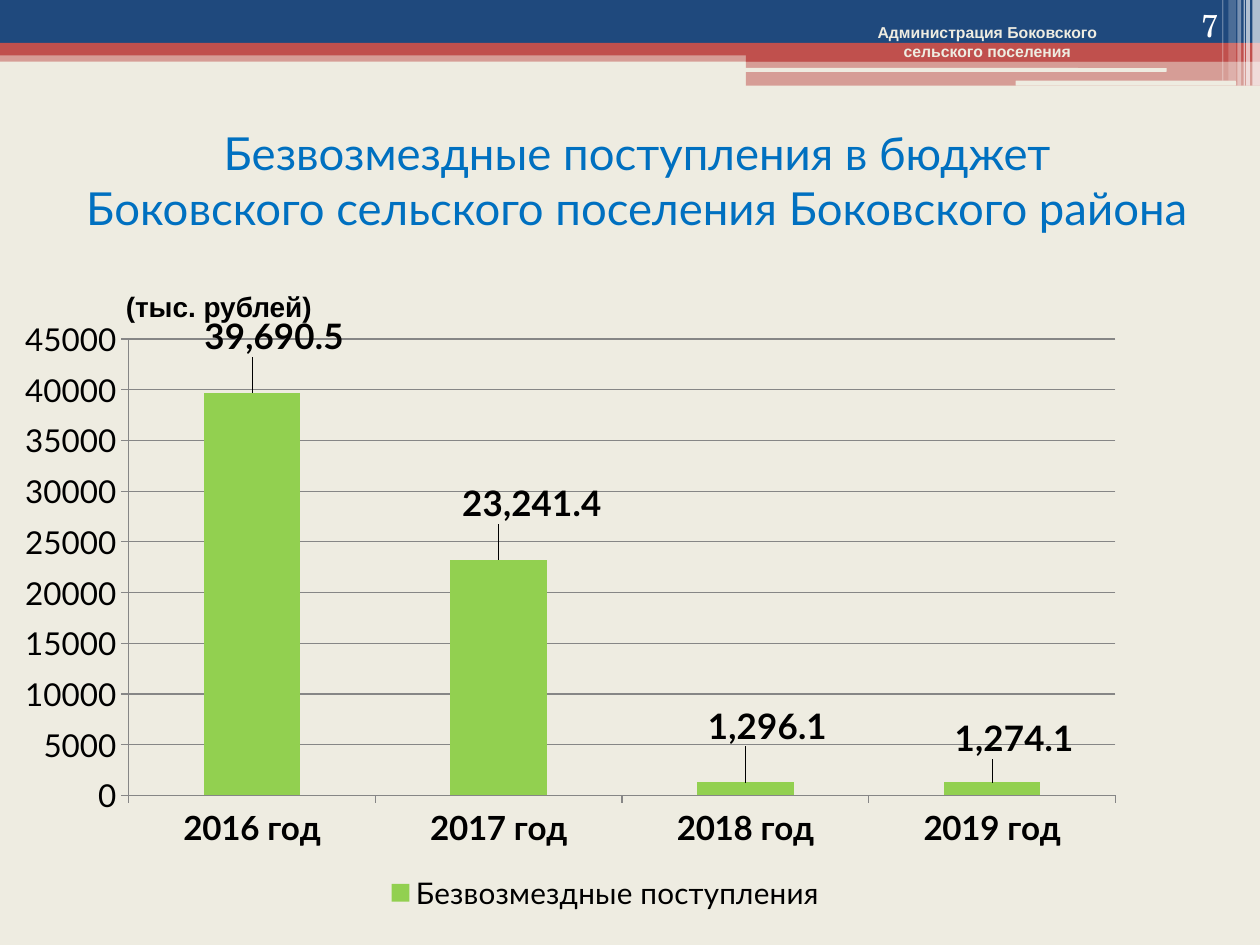
"""Build the slide on grants to the budget of the Bokovskoye settlement."""
from lxml.etree import SubElement
from pptx import Presentation
from pptx.chart.data import CategoryChartData as Data
from pptx.dml.color import RGBColor as Rgb
from pptx.enum.chart import XL_CHART_TYPE as Kind, XL_LABEL_POSITION as Spot
from pptx.enum.chart import XL_LEGEND_POSITION as Side, XL_TICK_MARK as Tick
from pptx.enum.shapes import MSO_SHAPE as Shape
from pptx.enum.text import MSO_ANCHOR as Anchor, PP_ALIGN as Align
from pptx.oxml import parse_xml
from pptx.oxml.ns import nsdecls, qn
from pptx.util import Inches, Pt

theme = {
    "paper": Rgb.from_string("EEECE1"), "navy": Rgb.from_string("1F497D"),
    "red": Rgb.from_string("C0504D"), "white": Rgb.from_string("FFFFFF"),
    "blue": Rgb.from_string("0070C0"), "black": Rgb.from_string("000000"),
    "green": Rgb.from_string("92D050"), "grey": Rgb.from_string("868686"),
    "sans": "Lato", "head": "Arial", "serif": "TeX Gyre Schola",
    "title": Pt(26), "label": Pt(20), "cat": Pt(19), "axis": Pt(18),
    "key": Pt(17), "unit": Pt(16), "note": Pt(9),
}
deck = Presentation()
deck.slide_width, deck.slide_height = Inches(10), Inches(7.5)
col, row = deck.slide_width / 1000, deck.slide_height / 750
slide = deck.slides.add_slide(deck.slide_layouts[6])
slide.background.fill.solid()
slide.background.fill.fore_color.rgb = theme["paper"]


def grid(x, y, wide, high):
    return int(x * col), int(y * row), int(wide * col), int(high * row)


def style(font, size, face, color="black", bold=False):
    look = {"size": theme[size], "name": theme[face], "bold": bold}
    for key, value in look.items():
        setattr(font, key, value)
    font.color.rgb = theme[color]


bands = [
    (0, 40, 1000, 9, "red", 50), (0, 0, 1000, 34, "navy", 100),
    (0, 34, 1000, 10, "red", 100), (592, 39, 408, 10, "red", 100),
    (592, 48, 408, 20, "red", 50), (591, 54, 335, 3, "paper", 100),
    (806, 64, 175, 4, "paper", 100), (994, 0, 6, 68, "white", 65),
    (989, 0, 3, 68, "white", 65), (987, 0, 1, 68, "white", 60),
    (982, 0, 3, 68, "white", 40), (975, 0, 6, 64, "white", 20),
    (970, 0, 1, 64, "white", 30),
]
for *place, color, alpha in bands:
    form = Shape.ROUNDED_RECTANGLE if color == "paper" else Shape.RECTANGLE
    band = slide.shapes.add_shape(form, *grid(*place))
    band.shadow.inherit = False
    band.line.fill.background()
    band.fill.solid()
    band.fill.fore_color.rgb = theme[color]
    if alpha < 100:
        tint = band.fill._xPr.find(".//" + qn("a:srgbClr"))
        SubElement(tint, qn("a:alpha"), val=str(alpha * 1000))

texts = [
    ((12, 84, 988, 117), Anchor.MIDDLE, Align.CENTER,
     ["Безвозмездные поступления в бюджет\v"
      "Боковского сельского поселения Боковского района"],
     ("title", "sans", "blue")),
    ((90, 225, 181, 37), Anchor.TOP, Align.LEFT, ["(тыс. рублей)"],
     ("unit", "head", "black", True)),
    ((628, 13, 311, 40), Anchor.TOP, Align.CENTER,
     ["Администрация Боковского", "сельского поселения"],
     ("note", "head", "paper", True)),
    ((894, 0, 83, 40), Anchor.BOTTOM, Align.RIGHT, ["7"],
     ("axis", "serif", "white")),
]
for place, anchor, align, lines, look in texts:
    frame = slide.shapes.add_textbox(*grid(*place)).text_frame
    frame.word_wrap, frame.vertical_anchor = True, anchor
    frame.text = "\n".join(lines)
    for para in frame.paragraphs:
        para.alignment = align
        for run in para.runs:
            style(run.font, *look)

data = Data(number_format="#,##0.0")
data.categories = [f"{year} год" for year in range(2016, 2020)]
data.add_series("Безвозмездные поступления", (39690.5, 23241.4, 1296.1, 1274.1))
chart = slide.shapes.add_chart(
    Kind.COLUMN_CLUSTERED, *grid(20, 245, 883, 483), data).chart
style(chart.font, "axis", "serif")
chart.has_title, chart.has_legend = False, True
chart.legend.position, chart.legend.include_in_layout = Side.RIGHT, False
style(chart.legend.font, "key", "sans")

cats, vals = chart.category_axis, chart.value_axis
style(cats.tick_labels.font, "cat", "sans", bold=True)
style(vals.tick_labels.font, "axis", "sans")
vals.has_major_gridlines = True
vals.minimum_scale, vals.maximum_scale, vals.major_unit = 0, 45000, 5000
vals.tick_labels.number_format = "General"
vals.tick_labels.number_format_is_linked = False
for axis in (cats, vals):
    axis.major_tick_mark = Tick.OUTSIDE
for line in (cats.format.line, vals.format.line, vals.major_gridlines.format.line):
    line.color.rgb, line.width = theme["grey"], Pt(0.75)

plot = chart.plots[0]
plot.gap_width, plot.vary_by_categories = 155, False
bars = plot.series[0]
bars.format.fill.solid()
bars.format.fill.fore_color.rgb = theme["green"]
labels = bars.data_labels
labels.show_value, labels.position = True, Spot.OUTSIDE_END
labels.number_format, labels.number_format_is_linked = "#,##0.0", False
style(labels.font, "label", "sans", bold=True)

spots = []
for i, shift in enumerate([(0.02, -0.05), (0.03, -0.05), (0.02, -0.05), (0.02, -0.03)]):
    label = bars.points[i].data_label
    style(label.font, "label", "sans", bold=True)
    label.position = Spot.OUTSIDE_END
    node = label._dLbl
    node.insert(1, parse_xml(
        f'<c:numFmt {nsdecls("c")} formatCode="#,##0.0" sourceLinked="0"/>'))
    spots.append((node, 1, "", dict(zip("xy", shift))))

area = chart._chartSpace.chart.plotArea
for old in area.findall(qn("c:layout")):
    area.remove(old)
inner = '<c:layoutTarget val="inner"/><c:xMode val="edge"/><c:yMode val="edge"/>'
edge = '<c:xMode val="edge"/><c:yMode val="edge"/>'
spots += [
    (area, 0, inner, {"x": 0.07, "y": 0.05, "w": 0.89, "h": 0.75}),
    (chart.legend._element, 1, edge, {"x": 0.32, "y": 0.92, "w": 0.4, "h": 0.08}),
]
spots[-2][3].update(x=0.09, y=0.05)
for node, at, mode, sizes in spots:
    parts = "".join(f'<c:{key} val="{value}"/>' for key, value in sizes.items())
    node.insert(at, parse_xml(
        f'<c:layout {nsdecls("c")}><c:manualLayout>{mode}{parts}'
        '</c:manualLayout></c:layout>'))
deck.save("out.pptx")
